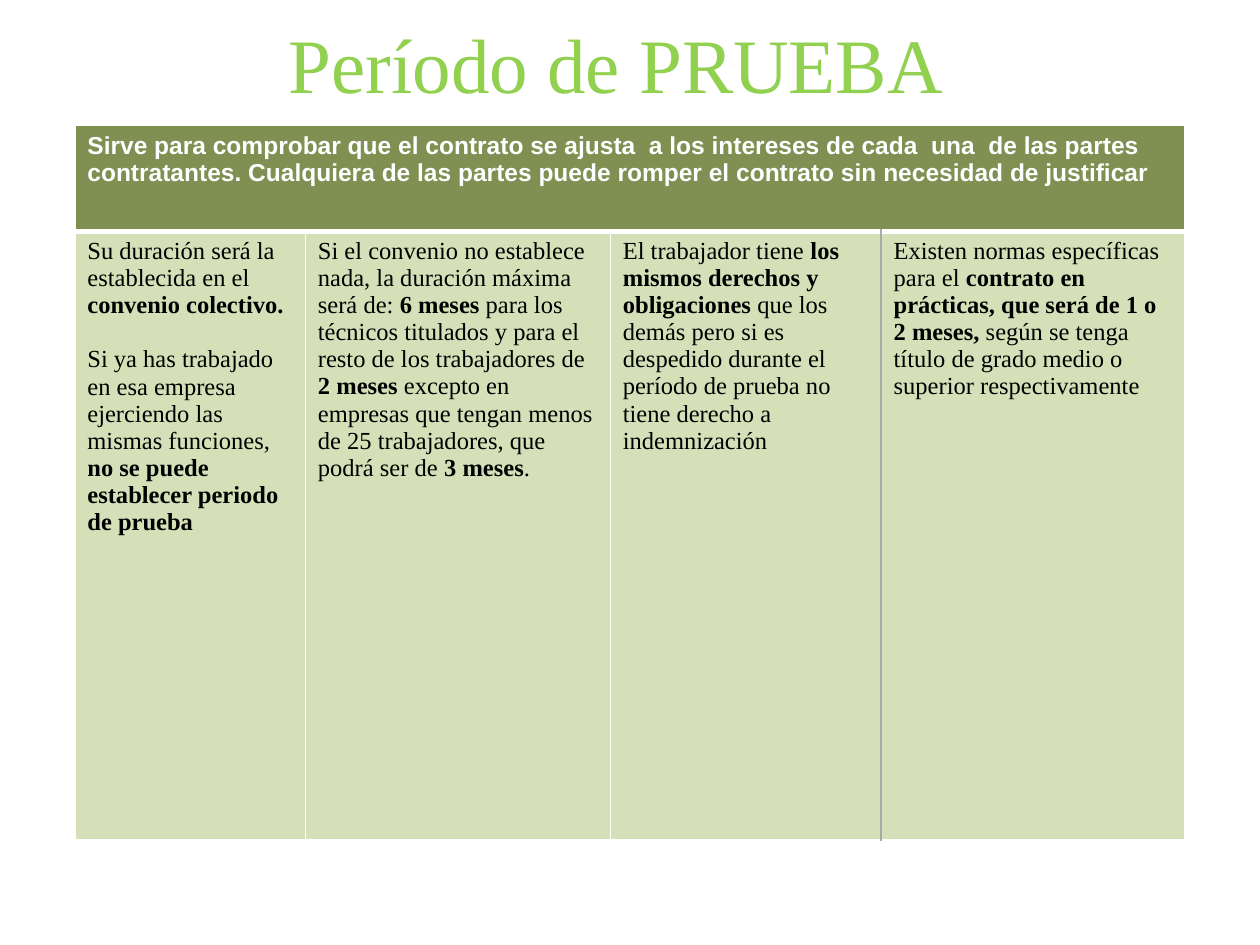
from lxml.etree import SubElement
from pptx import Presentation
from pptx.dml.color import RGBColor
from pptx.enum.text import MSO_ANCHOR, PP_ALIGN
from pptx.oxml.ns import qn
from pptx.util import Pt

TITLE = "Período de PRUEBA"
HEAD = (
    "*Sirve para comprobar que el contrato se ajusta  a los intereses de cada  una  "
    "de las partes contratantes. Cualquiera de las partes puede romper el contrato "
    "sin necesidad de justificar*"
)
BODY = [
    [
        "Su duración será la establecida en el *convenio colectivo.*",
        "Si ya has trabajado en esa empresa ejerciendo las mismas funciones, "
        "*no se puede establecer periodo de prueba*",
    ],
    [
        "Si el convenio no establece nada, la duración máxima será de: *6 meses* para "
        "los técnicos titulados y para el resto de los trabajadores de *2 meses *"
        "excepto en empresas que tengan menos de 25 trabajadores, que podrá ser de "
        "*3 meses*.",
    ],
    [
        "El trabajador tiene *los mismos derechos y obligaciones *que los demás pero "
        "si es despedido durante el período de prueba no tiene derecho a indemnización",
    ],
    [
        "Existen normas específicas para el *contrato en prácticas, que será de 1 o "
        "2 meses,* según se tenga título de grado medio o superior respectivamente",
    ],
]
COLS = [131.75, 174.25, 154.75, 173.5]
ROWS = [60.5, 347.75]
THEME = {
    "serif": "Times New Roman", "sans": "Arial",
    "big": 44, "small": 14, "gap": 15.5,
    "lime": "92D050", "olive": "809052", "pale": "D5E0B8",
    "white": "FFFFFF", "black": "000000", "gray": "AAAAAA",
}


def write(frame, parts, font="serif", size="small", color="black", align=PP_ALIGN.LEFT):
    """Write paragraphs in which asterisks enclose bold text."""
    for i, part in enumerate(parts):
        para = frame.add_paragraph() if i else frame.paragraphs[0]
        para.alignment = align
        para.space_before = Pt(THEME["gap"] if i else 0)
        for j, text in enumerate(part.split("*")):
            if text:
                run = para.add_run()
                run.text = text
                run.font.name = THEME[font]
                run.font.size = Pt(THEME[size])
                run.font.bold = j % 2 == 1
                run.font.color.rgb = RGBColor.from_string(THEME[color])


def dress(cell, fill, left="white", right="white", top=1, bottom=1):
    """Set the borders and the fill of a table cell."""
    props = cell._tc.get_or_add_tcPr()
    sides = [("L", left, 1), ("R", right, 1), ("T", "white", top), ("B", "white", bottom)]
    for side, color, width in sides:
        line = SubElement(props, qn(f"a:ln{side}"), w=str(Pt(width)))
        solid = SubElement(line, qn("a:solidFill"))
        SubElement(solid, qn("a:srgbClr"), val=THEME[color])
    cell.fill.solid()
    cell.fill.fore_color.rgb = RGBColor.from_string(THEME[fill])


def main():
    """Build the slide and save it."""
    deck = Presentation()
    deck.slide_width, deck.slide_height = Pt(720), Pt(540)
    slide = deck.slides.add_slide(deck.slide_layouts[6])

    frame = slide.shapes.add_textbox(Pt(128), Pt(0.75), Pt(448.5), Pt(28)).text_frame
    frame.word_wrap = True
    frame.vertical_anchor = MSO_ANCHOR.TOP
    frame.margin_top = Pt(8.6)
    frame.margin_bottom = Pt(0)
    write(frame, [TITLE], size="big", color="lime", align=PP_ALIGN.CENTER)

    table = slide.shapes.add_table(
        len(ROWS), len(COLS), Pt(42.75), Pt(71.75), Pt(sum(COLS)), Pt(sum(ROWS))
    ).table
    table.first_row = table.horz_banding = False
    for col, width in zip(table.columns, COLS):
        col.width = Pt(width)
    for row, height in zip(table.rows, ROWS):
        row.height = Pt(height)

    table.cell(0, 0).merge(table.cell(0, len(COLS) - 1))
    write(table.cell(0, 0).text_frame, [HEAD], font="sans", color="white")
    edges = ["white"] * 3 + ["gray", "white"]
    for i, parts in enumerate(BODY):
        dress(table.cell(0, i), "olive", bottom=3)
        cell = table.cell(1, i)
        dress(cell, "pale", left=edges[i], right=edges[i + 1], top=3)
        write(cell.text_frame, parts)

    deck.save("out.pptx")


if __name__ == "__main__":
    main()
